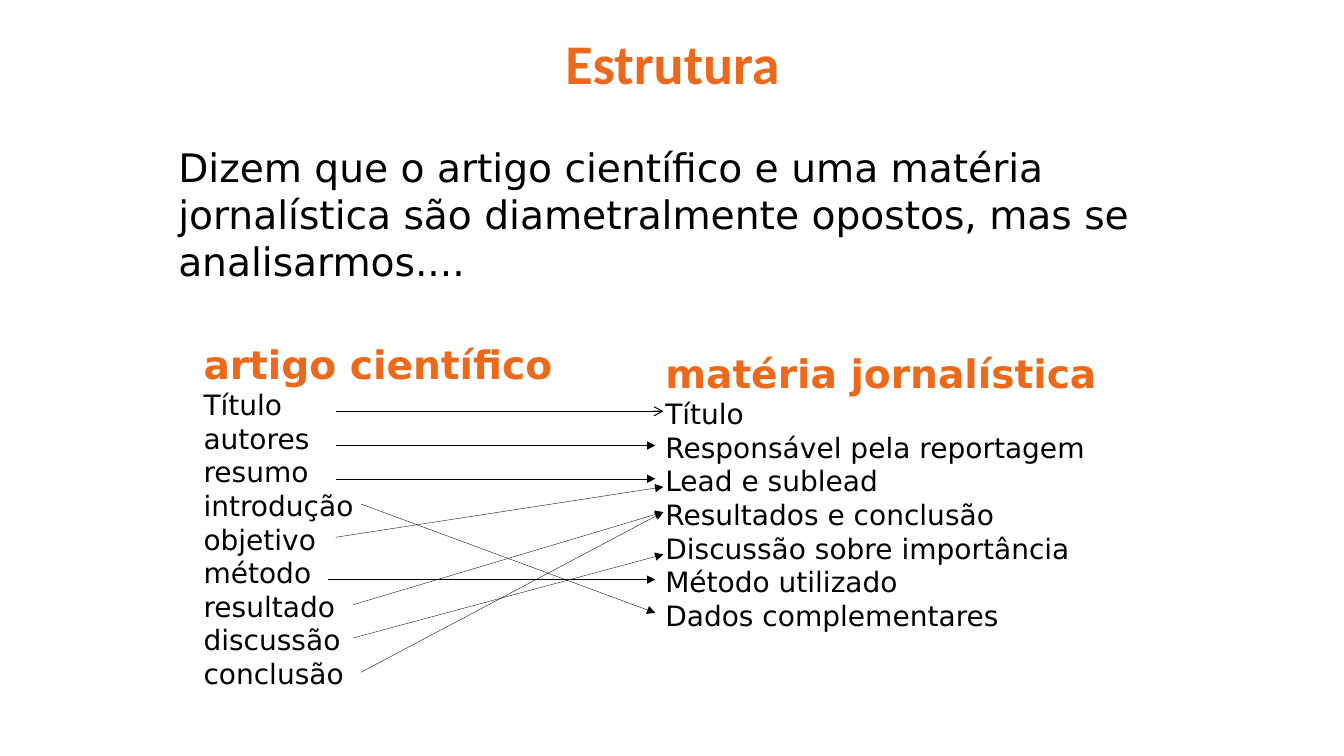
"""Build the slide comparing a scientific article with a news story."""
from lxml import etree
from pptx import Presentation
from pptx.dml.color import RGBColor
from pptx.enum.shapes import MSO_CONNECTOR
from pptx.enum.text import PP_ALIGN
from pptx.oxml.ns import qn
from pptx.util import Inches, Pt

STRAIGHT = MSO_CONNECTOR.STRAIGHT
LEFT, CENTER = PP_ALIGN.LEFT, PP_ALIGN.CENTER
ORANGE = RGBColor(0xEC, 0x68, 0x1B)
BLACK = RGBColor(0x00, 0x00, 0x00)

presentation = Presentation()
presentation.slide_width = Inches(13.33)
presentation.slide_height = Inches(7.5)
slide = presentation.slides.add_slide(presentation.slide_layouts[6])


def add_paragraph(text_frame, text, size=20, font="DejaVu Sans", color=BLACK,
                  bold=False, align=LEFT):
    """Write text into the first paragraph if it is empty, else a new one."""
    paragraph = text_frame.paragraphs[0]
    if paragraph.runs:
        paragraph = text_frame.add_paragraph()
    paragraph.alignment = align
    run = paragraph.add_run()
    run.text = text
    run.font.name = font
    run.font.size = Pt(size)
    run.font.bold = bold
    run.font.color.rgb = color


def add_text_frame(left, top, width, height):
    """Add a wrapping text box and return its text frame."""
    text_box = slide.shapes.add_textbox(
        Inches(left), Inches(top), Inches(width), Inches(height))
    text_box.text_frame.word_wrap = True
    return text_box.text_frame


title = add_text_frame(1.67, 0.23, 10, 0.77)
add_paragraph(title, "Estrutura", size=40, font="Calibri", color=ORANGE,
              bold=True, align=CENTER)

introduction = add_text_frame(1.67, 1.37, 10.77, 1.5)
add_paragraph(introduction, "Dizem que o artigo científico e uma matéria "
              "jornalística são diametralmente opostos, mas se analisarmos....",
              size=28)

columns = [
    ((1.92, 3.33, 3.92, 3.9), "artigo científico",
     ["Título", "autores", "resumo", "introdução", "objetivo", "método",
      "resultado", "discussão", "conclusão"]),
    ((6.5, 3.42, 4.92, 2.93), "matéria jornalística",
     ["Título", "Responsável pela reportagem", "Lead e sublead",
      "Resultados e conclusão", "Discussão sobre importância",
      "Método utilizado", "Dados complementares"]),
]
for bounds, heading, items in columns:
    column = add_text_frame(*bounds)
    add_paragraph(column, heading, size=28, color=ORANGE, bold=True)
    for item in items:
        add_paragraph(column, item)

arrows = [
    (3.33, 4.08, 6.58, 4.08, 0.75, "arrow"),
    (3.33, 4.42, 6.5, 4.42, 0.25, "triangle"),
    (3.33, 4.75, 6.5, 4.75, 0.25, "triangle"),
    (3.58, 5, 6.5, 6.08, 0.25, "triangle"),
    (3.5, 6, 6.58, 5.08, 0.25, "triangle"),
    (3.58, 6.67, 6.58, 5.08, 0.25, "triangle"),
    (3.5, 6.33, 6.58, 5.5, 0.25, "triangle"),
    (3.25, 5.75, 6.5, 5.75, 0.25, "triangle"),
    (3.33, 5.33, 6.58, 4.83, 0.25, "triangle"),
]
for start_x, start_y, end_x, end_y, width, head in arrows:
    connector = slide.shapes.add_connector(
        STRAIGHT, Inches(start_x), Inches(start_y), Inches(end_x), Inches(end_y))
    connector.line.color.rgb = BLACK
    connector.line.width = Pt(width)
    properties = connector._element.spPr
    etree.SubElement(properties.find(qn("a:ln")), qn("a:tailEnd"), type=head)
    etree.SubElement(properties, qn("a:effectLst"))

presentation.save("out.pptx")
